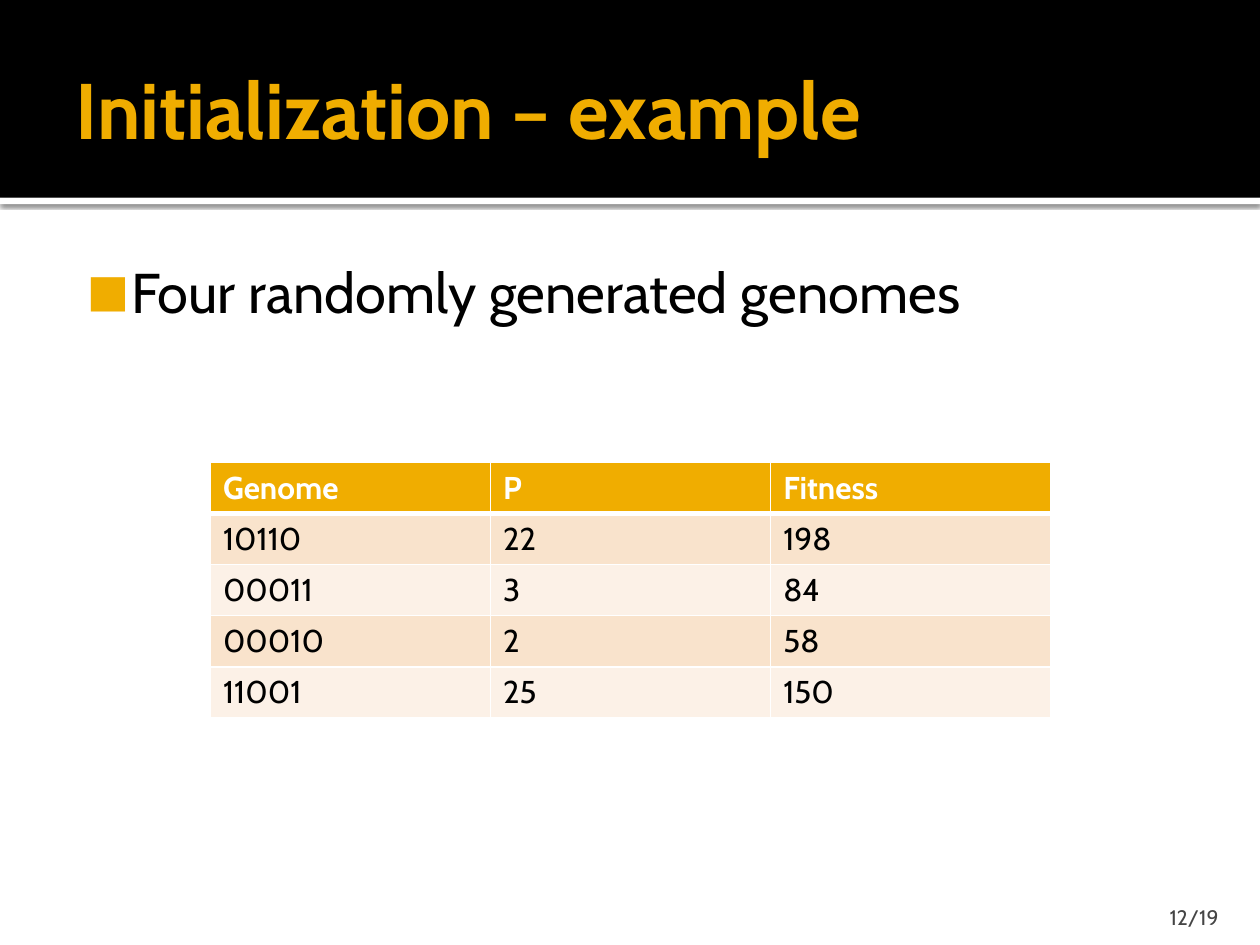
from dataclasses import dataclass

from lxml import etree
from pptx import Presentation
from pptx import util as u
from pptx.dml.color import RGBColor
from pptx.enum import shapes, text
from pptx.oxml import parse_xml
from pptx.oxml.ns import nsdecls, qn


@dataclass(frozen=True)
class Theme:
    font: str = "Cabin"
    accent: str = "F0AD00"
    dark: str = "000000"
    light: str = "FFFFFF"
    muted: str = "454545"
    bands: tuple = ("F9E3CC", "FCF1E7")
    title_size: int = 45
    body_size: int = 32
    table_size: int = 18
    number_size: int = 12


THEME = Theme()
ROWS = [
    ("Genome", "P", "Fitness"),
    ("10110", "22", "198"),
    ("00011", "3", "84"),
    ("00010", "2", "58"),
    ("11001", "25", "150"),
]


def place(shape, box):
    shape.left, shape.top, shape.width, shape.height = map(u.Inches, box)


def write(frame, content, *, size, color, bold=False,
          align=text.PP_ALIGN.LEFT, anchor=None, insets=None):
    """Write one formatted paragraph; insets are left, top, right, bottom."""
    if insets:
        frame.word_wrap = True
        frame.auto_size = text.MSO_AUTO_SIZE.NONE
        (frame.margin_left, frame.margin_top,
         frame.margin_right, frame.margin_bottom) = map(u.Inches, insets)
    if anchor is not None:
        frame.vertical_anchor = anchor
    paragraph = frame.paragraphs[0]
    paragraph.alignment = align
    paragraph.space_before = u.Pt(0)
    run = paragraph.add_run()
    run.text = content
    run.font.name = THEME.font
    run.font.size = u.Pt(size)
    run.font.bold = bold
    run.font.color.rgb = RGBColor.from_string(color)
    return paragraph


def add_rectangle(slide, box, color):
    """Add a plain rectangle behind everything else."""
    shape = slide.shapes.add_shape(
        shapes.MSO_SHAPE.RECTANGLE, *map(u.Inches, box))
    shape.shadow.inherit = False
    shape.fill.solid()
    shape.fill.fore_color.rgb = RGBColor.from_string(color)
    shape.line.fill.background()
    slide.shapes._spTree.insert(2, shape._element)
    return shape


def add_header(slide, box, content):
    left, top, width, height = box
    add_rectangle(slide, box, THEME.dark)
    # White strip that casts a soft shadow below the header
    strip = add_rectangle(slide, (left, top + height, width, 0.05), THEME.light)
    effects = strip._element.spPr.find(qn("a:effectLst"))
    effects.append(parse_xml(
        f'<a:outerShdw {nsdecls("a")} blurRad="{u.Pt(2.5)}" dist="{u.Pt(0.8)}"'
        f' dir="5400000" algn="tl" rotWithShape="0">'
        f'<a:srgbClr val="{THEME.dark}"><a:alpha val="60000"/></a:srgbClr>'
        f'</a:outerShdw>'))
    title = slide.shapes.title
    place(title, (left + 0.5, top + 0.17, width - 1, height - 0.2))
    write(title.text_frame, content, size=THEME.title_size, color=THEME.accent,
          bold=True, anchor=text.MSO_ANCHOR.MIDDLE,
          insets=(0.1, 0.05, 0.05, 0.05))


def add_body(slide, box, content):
    body = slide.placeholders[1]
    place(body, box)
    paragraph = write(body.text_frame, content, size=THEME.body_size,
                      color=THEME.dark, anchor=text.MSO_ANCHOR.TOP,
                      insets=(0.06, 0.1, 0.1, 0.05))
    # Square bullet with hanging indent
    properties = paragraph._p.get_or_add_pPr()
    properties.set("marL", str(u.Inches(0.48)))
    properties.set("indent", str(u.Inches(-0.35)))
    color = etree.SubElement(properties, qn("a:buClr"))
    etree.SubElement(color, qn("a:srgbClr"), val=THEME.accent)
    etree.SubElement(properties, qn("a:buSzPct"), val="80000")
    etree.SubElement(properties, qn("a:buFont"), typeface=THEME.font)
    etree.SubElement(properties, qn("a:buChar"), char="■")


def set_borders(cell, color, **widths):
    properties = cell._tc.get_or_add_tcPr()
    for side in "LRTB":
        line = etree.SubElement(properties, qn(f"a:ln{side}"),
                                w=str(u.Pt(widths.get(side, 1))))
        fill = etree.SubElement(line, qn("a:solidFill"))
        etree.SubElement(fill, qn("a:srgbClr"), val=color)


def add_genome_table(slide, box, rows):
    table = slide.shapes.add_table(
        len(rows), len(rows[0]), *map(u.Inches, box)).table
    for row_index, values in enumerate(rows):
        header = row_index == 0
        fill = THEME.accent if header else THEME.bands[(row_index - 1) % 2]
        for column_index, value in enumerate(values):
            cell = table.cell(row_index, column_index)
            # Thick rule between the header and the first data row
            set_borders(cell, THEME.light, B=3 if header else 1,
                        T=3 if row_index == 1 else 1)
            cell.fill.solid()
            cell.fill.fore_color.rgb = RGBColor.from_string(fill)
            write(cell.text_frame, value, size=THEME.table_size, bold=header,
                  color=THEME.light if header else THEME.dark)


def add_page_number(slide, box, content):
    number = slide.shapes.add_textbox(*map(u.Inches, box))
    write(number.text_frame, content, size=THEME.number_size,
          color=THEME.muted, align=text.PP_ALIGN.RIGHT,
          anchor=text.MSO_ANCHOR.BOTTOM, insets=(0.1, 0.05, 0.1, 0))


def main():
    presentation = Presentation()
    presentation.slide_width = u.Inches(10)
    presentation.slide_height = u.Inches(7.5)
    slide = presentation.slides.add_slide(presentation.slide_layouts[1])
    add_header(slide, (0, 0, 10, 1.57), "Initialization – example")
    add_body(slide, (0.5, 1.94, 9, 5.06), "Four randomly generated genomes")
    add_genome_table(slide, (1.67, 3.67, 6.67, 2.02), ROWS)
    add_page_number(slide, (8.97, 7.08, 0.8, 0.3), "12/19")
    presentation.save("out.pptx")


if __name__ == "__main__":
    main()
